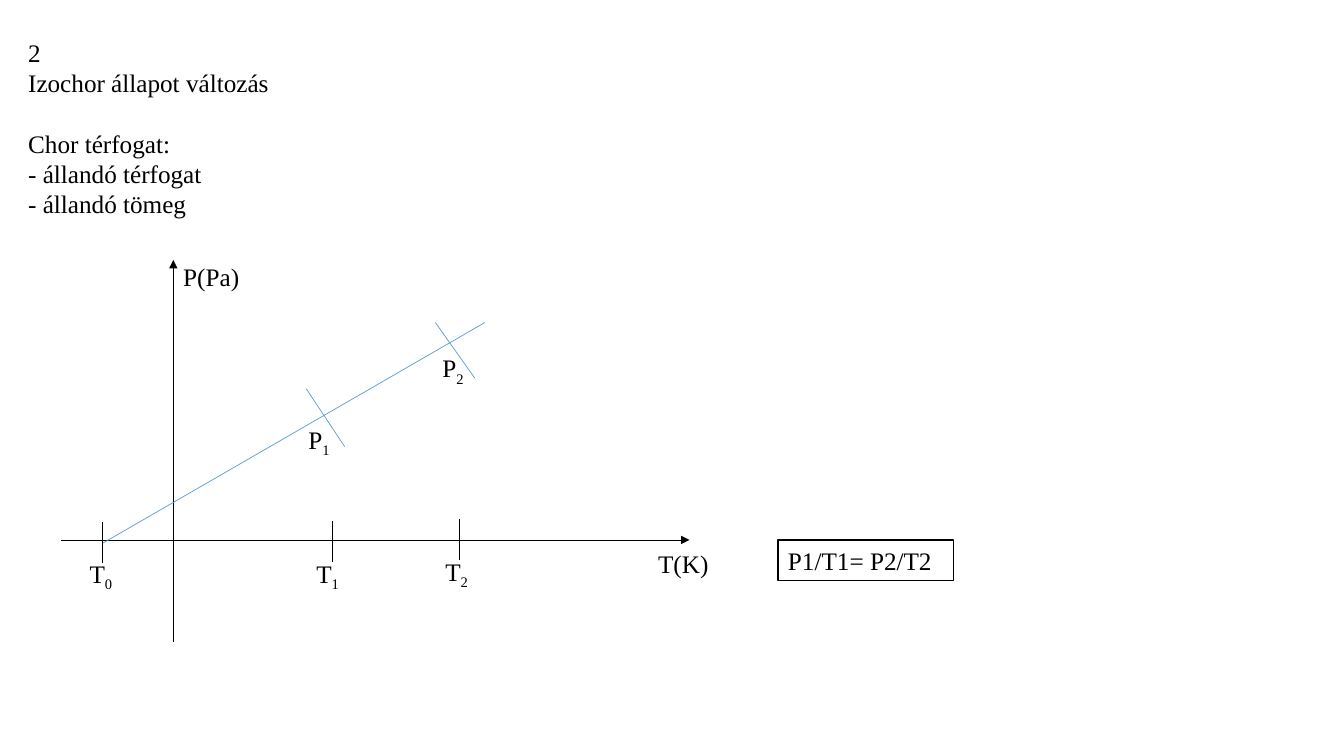
"""Builds a slide on isochoric change of state with a pressure-temperature diagram."""
from lxml.etree import SubElement
from pptx import Presentation
from pptx.dml.color import RGBColor
from pptx.enum.shapes import MSO_CONNECTOR as CONN, MSO_SHAPE as SHAPE
from pptx.enum.text import MSO_ANCHOR as ANCHOR, MSO_AUTO_SIZE as FIT, PP_ALIGN as ALIGN
from pptx.oxml.ns import qn
from pptx.util import Pt

BLACK = RGBColor(0x00, 0x00, 0x00)
WHITE = RGBColor(0xFF, 0xFF, 0xFF)
BLUE = RGBColor(0x5B, 0x9B, 0xD5)
FONT = "Times New Roman"
LABEL_H = 29


def add_run(p, text, size=18, color=BLACK, subscript=False):
    """Add one formatted run to a paragraph."""
    r = p.add_run()
    r.text = text
    r.font.name = FONT
    r.font.size = Pt(size)
    r.font.color.rgb = color
    if subscript:
        r._r.get_or_add_rPr().set("baseline", "-25000")


def write(sp, paragraphs, sub="", gap_before_last=0, anchor=ANCHOR.TOP):
    """Fill a shape with paragraphs, ending in an optional subscript."""
    tf = sp.text_frame
    tf.word_wrap = True
    tf.auto_size = FIT.SHAPE_TO_FIT_TEXT
    tf.vertical_anchor = anchor
    for i, lines in enumerate(paragraphs):
        p = tf.paragraphs[0] if i == 0 else tf.add_paragraph()
        p.alignment = ALIGN.LEFT
        for j, line in enumerate(lines.split("\n")):
            if j:
                p.add_line_break()
            add_run(p, line)
    p.space_before = Pt(gap_before_last)
    if sub:
        add_run(p, sub, subscript=True)


def add_text(slide, x, y, w, paragraphs, h=LABEL_H, **fmt):
    """Add a text box."""
    sp = slide.shapes.add_textbox(Pt(x), Pt(y), Pt(w), Pt(h))
    write(sp, paragraphs, **fmt)


def add_line(slide, x1, y1, x2, y2, color=BLACK, arrow=False):
    """Add a thin straight line, with an arrowhead at its end if asked."""
    line = slide.shapes.add_connector(CONN.STRAIGHT, Pt(x1), Pt(y1), Pt(x2), Pt(y2))
    line.line.color.rgb = color
    line.line.width = Pt(0.5)
    if arrow:
        SubElement(line.line._get_or_add_ln(), qn("a:tailEnd"), type="triangle")
    SubElement(line._element.spPr, qn("a:effectLst"))


def add_formula(slide, x, y, w, text):
    """Add the framed formula."""
    sp = slide.shapes.add_shape(SHAPE.RECTANGLE, Pt(x), Pt(y), Pt(w), Pt(LABEL_H))
    sp.shadow.inherit = False
    sp.fill.solid()
    sp.fill.fore_color.rgb = WHITE
    sp.line.color.rgb = BLACK
    sp.line.width = Pt(1)
    write(sp, [text])


def main():
    """Build and save the slide."""
    prs = Presentation()
    prs.slide_width, prs.slide_height = Pt(960), Pt(540)
    slide = prs.slides.add_slide(prs.slide_layouts[6])

    add_text(slide, 13, 23, 929.5, [
        "2",
        "Izochor állapot változás",
        "Chor térfogat:\n- állandó térfogat\n- állandó tömeg",
    ], h=138.2, gap_before_last=21.6)

    axis_y = 385.7
    add_line(slide, 123.8, 458.6, 123.8, 185.8, arrow=True)
    add_line(slide, 43.9, axis_y, 492.5, axis_y, arrow=True)
    add_text(slide, 123.8, 182.9, 59, ["P(Pa)"])
    add_text(slide, 463, 388, 63.4, ["T(K)"])

    for x, top in ((73.4, 373), (237.6, 372.2), (328.3, 370.8)):
        add_line(slide, x, top, x, top + 29)

    add_line(slide, 73.4, 388, 346.3, 230.4, color=BLUE)
    add_line(slide, 218.9, 277.9, 246.2, 319, color=BLUE)
    add_line(slide, 311, 230.4, 339.1, 270, color=BLUE)

    for letter, sub, x, y, w in (
        ("T", "0", 56.9, 395.3, 51.1),
        ("T", "1", 218.9, 395.3, 36),
        ("T", "2", 311, 393.8, 34.6),
        ("P", "1", 213.1, 299.5, 54),
        ("P", "2", 308.9, 248.4, 49.7),
    ):
        add_text(slide, x, y, w, [letter], sub=sub)

    add_formula(slide, 555.8, axis_y, 125.3, "P1/T1= P2/T2")
    prs.save("out.pptx")


if __name__ == "__main__":
    main()
